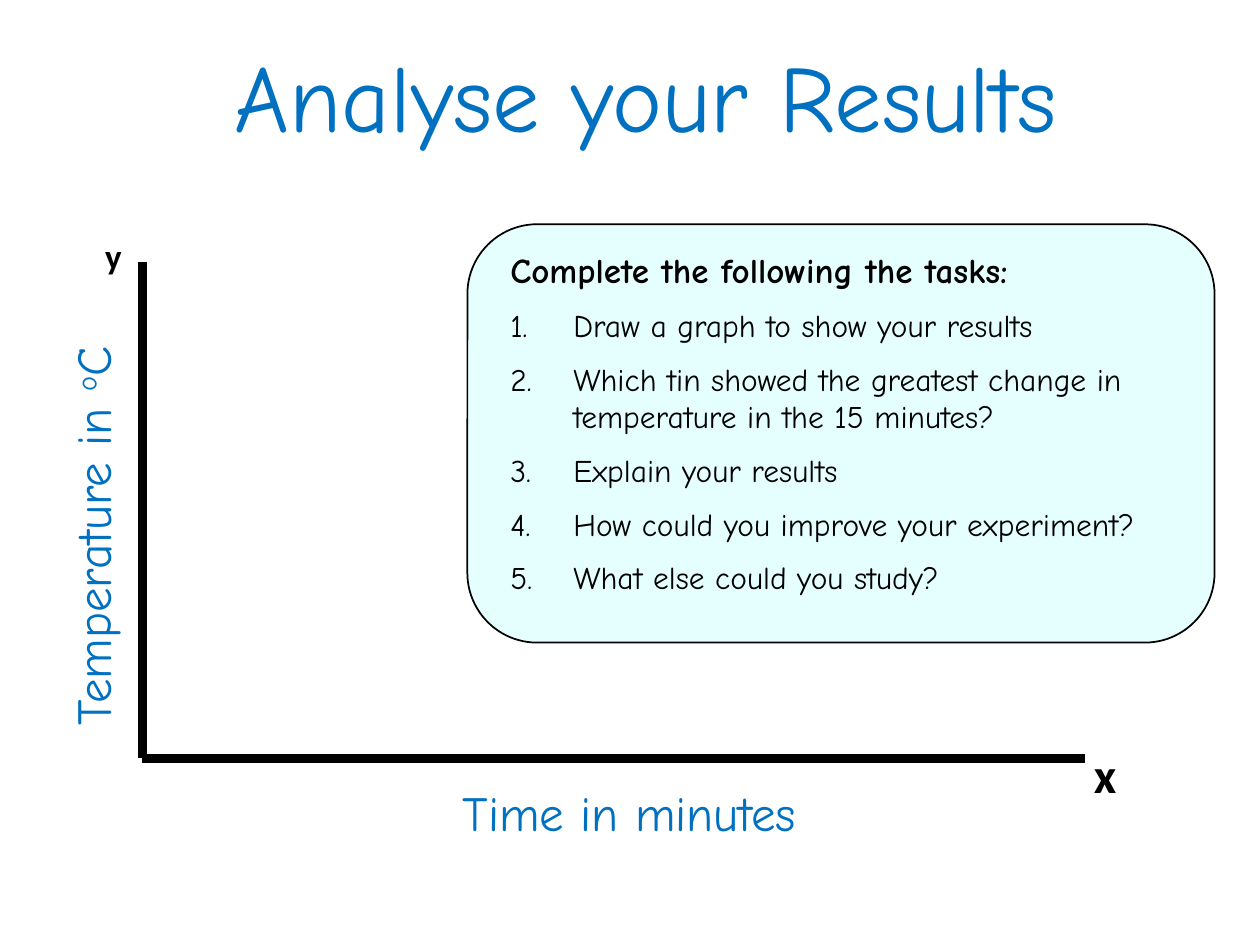
from dataclasses import dataclass

from lxml.etree import SubElement
from pptx import Presentation
from pptx.dml.color import RGBColor
from pptx.enum.shapes import MSO_CONNECTOR as Connector, MSO_SHAPE as Shape
from pptx.enum.text import MSO_ANCHOR as Anchor, MSO_AUTO_SIZE as AutoSize, PP_ALIGN as Align
from pptx.oxml.ns import qn
from pptx.util import Inches, Pt

COLOURS = {"heading": "0070C0", "ink": "000000", "card": "E5FFFF"}
HAND_FONT, AXIS_FONT = "Comic Neue", "Calibri"
FRAME_FORMAT = {"word_wrap": True, "auto_size": AutoSize.NONE, "vertical_anchor": Anchor.TOP}


@dataclass
class Axis:
    start: tuple[float, float]
    end: tuple[float, float]


@dataclass
class Label:
    wording: list[tuple[str, int]]  # text and baseline shift in percent
    box: tuple[float, float, float, float]
    size: int
    font: str = HAND_FONT
    colour: str = "heading"
    bold: bool = False
    align: Align = Align.CENTER
    rotation: int = 0


ORIGIN = (1.13, 6.02)
AXES = [Axis((1.13, 2.08), ORIGIN), Axis(ORIGIN, (8.61, 6.02))]
LABELS = [
    Label([("Time in minutes", 0)], (3.34, 6.16, 3.31, 0.57), 28),
    Label([("Temperature in ", 0), ("o", 30), ("C", 0)], (-1.1, 3.74, 3.66, 0.57), 28,
          align=Align.LEFT, rotation=270),
    Label([("y", 0)], (0.43, 1.81, 0.94, 0.44), 20, AXIS_FONT, "ink", True),
    Label([("x", 0)], (8.3, 5.86, 0.94, 0.57), 28, AXIS_FONT, "ink", True),
]
TASK_HEADING = "Complete the following the tasks:"
TASKS = [
    "Draw a graph to show your results",
    "Which tin showed the greatest change in temperature in the 15 minutes?",
    "Explain your results",
    "How could you improve your experiment?",
    "What else could you study?",
]


def colour(name: str) -> RGBColor:
    return RGBColor.from_string(COLOURS[name])


def apply_format(target, values: dict) -> None:
    for name, value in values.items():
        setattr(target, name, value)


def place(shape, box: tuple[float, float, float, float]) -> None:
    sides = ("left", "top", "width", "height")
    apply_format(shape, {side: Inches(length) for side, length in zip(sides, box)})


def add_run(paragraph, text: str, size: int, ink: str,
            font: str = HAND_FONT, bold: bool = False):
    run = paragraph.add_run()
    run.text = text
    apply_format(run.font, {"name": font, "size": Pt(size), "bold": bold})
    run.font.color.rgb = colour(ink)
    return run


def set_bullet(paragraph, numbered: bool) -> None:
    properties = paragraph._p.get_or_add_pPr()
    indent = Inches(0.5) if numbered else 0
    properties.set("marL", str(indent))
    properties.set("indent", str(-indent))
    if numbered:
        SubElement(properties, qn("a:buFont"), typeface="+mj-lt")
        SubElement(properties, qn("a:buAutoNum"), type="arabicPeriod")
    else:
        SubElement(properties, qn("a:buNone"))


def add_card(slide) -> None:
    card = slide.shapes.add_shape(Shape.ROUNDED_RECTANGLE, 0, 0, 0, 0)
    place(card, (3.71, 1.78, 5.93, 3.32))
    card.shadow.inherit = False
    card.fill.solid()
    card.fill.fore_color.rgb = colour("card")
    card.line.color.rgb = colour("ink")
    card.line.width = Pt(1)


def add_axis(slide, axis: Axis) -> None:
    ends = [Inches(length) for length in (*axis.start, *axis.end)]
    line = slide.shapes.add_connector(Connector.STRAIGHT, *ends)
    line.line.color.rgb = colour("ink")
    line.line.width = Pt(5)
    SubElement(line._element.spPr, qn("a:effectLst"))


def add_label(slide, label: Label) -> None:
    shape = slide.shapes.add_textbox(0, 0, 0, 0)
    place(shape, label.box)
    shape.rotation = label.rotation
    apply_format(shape.text_frame, FRAME_FORMAT)
    paragraph = shape.text_frame.paragraphs[0]
    paragraph.alignment = label.align
    for text, shift in label.wording:
        run = add_run(paragraph, text, label.size, label.colour, label.font, label.bold)
        if shift:
            run.font._element.set("baseline", str(shift * 1000))


def fill_title(title) -> None:
    place(title, (0.79, 0.25, 8.67, 1.01))
    apply_format(title.text_frame, FRAME_FORMAT)
    paragraph = title.text_frame.paragraphs[0]
    paragraph.alignment = Align.CENTER
    add_run(paragraph, "Analyse your Results", 54, "heading")


def fill_tasks(body) -> None:
    place(body, (3.95, 1.92, 5.75, 3.01))
    frame = body.text_frame
    apply_format(frame, FRAME_FORMAT)
    heading = frame.paragraphs[0]
    heading.space_before = Pt(0)
    set_bullet(heading, numbered=False)
    add_run(heading, TASK_HEADING, 20, "ink", bold=True)
    for task in TASKS:
        paragraph = frame.add_paragraph()
        paragraph.space_before = Pt(9)
        set_bullet(paragraph, numbered=True)
        add_run(paragraph, task, 18, "ink")


def main() -> None:
    presentation = Presentation()
    presentation.slide_width, presentation.slide_height = Inches(10), Inches(7.5)
    slide = presentation.slides.add_slide(presentation.slide_layouts[1])
    title, body = slide.placeholders

    # Task card and graph axes
    add_card(slide)
    for axis in AXES:
        add_axis(slide, axis)
    for label in LABELS:
        add_label(slide, label)

    # Title and task list, brought in front of the card
    fill_tasks(body)
    fill_title(title)
    for placeholder in (body, title):
        slide.shapes._spTree.append(placeholder._element)

    presentation.save("out.pptx")


if __name__ == "__main__":
    main()
